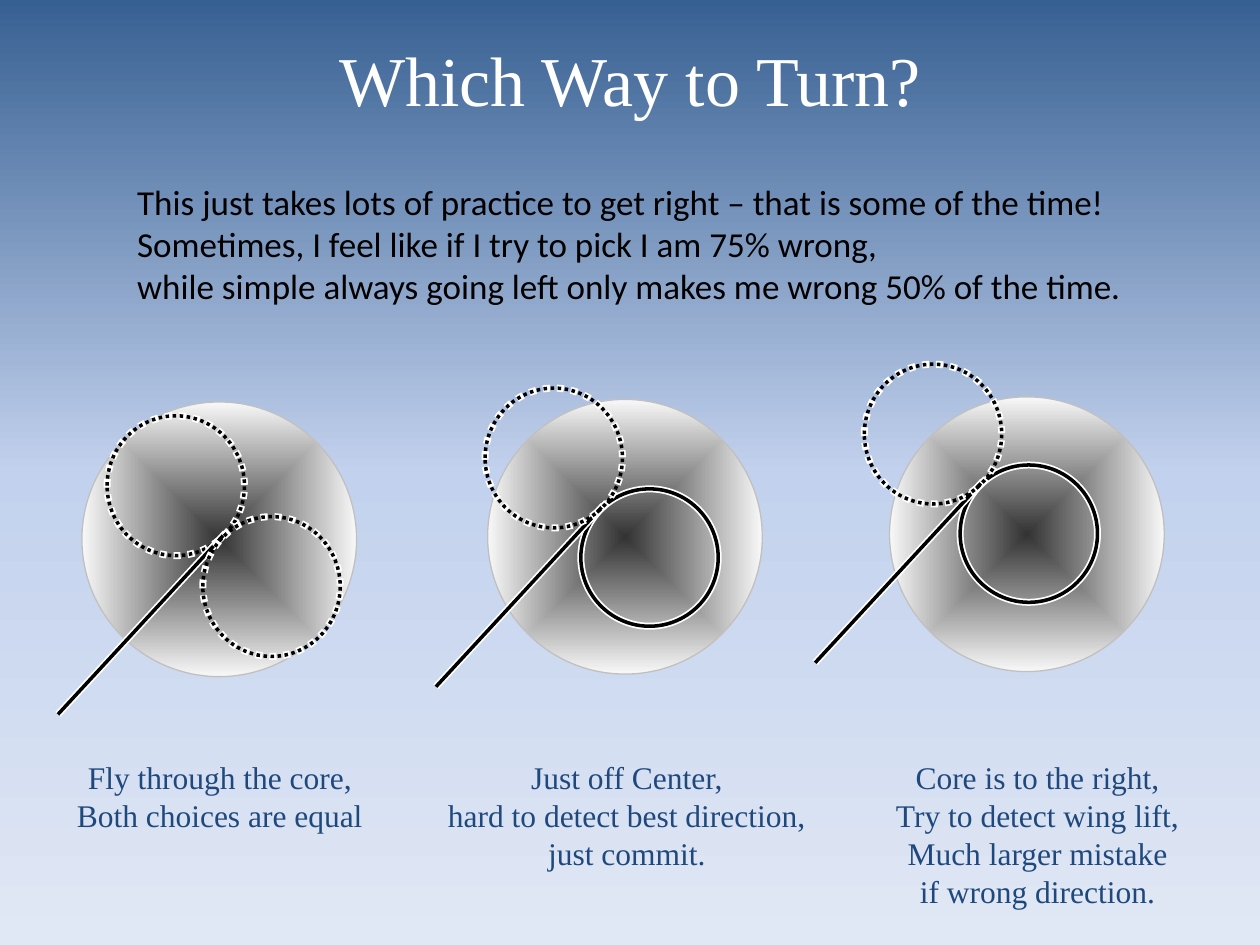
from lxml.etree import SubElement
from pptx import Presentation
from pptx.dml.color import RGBColor
from pptx.enum.dml import MSO_LINE
from pptx.enum.shapes import MSO_CONNECTOR, MSO_SHAPE
from pptx.enum.text import MSO_ANCHOR, MSO_AUTO_SIZE, PP_ALIGN
from pptx.oxml.ns import qn
from pptx.util import Emu, Pt

PX = 9144  # 100 px to the inch
SERIF = "Times New Roman"
CORE = 218
RING = 109
DOTS = MSO_LINE.ROUND_DOT

# Box of the first ring, core offset from it, second ring solid, caption box, caption
TURNS = [
    ((85, 330), (-20, -11), False, (50, 597, 249, 71),
     "Fly through the core,\nBoth choices are equal"),
    ((385, 308), (2, 9), True, (344, 597, 307, 101),
     "Just off Center,\nhard to detect best direction,\njust commit."),
    ((686, 289), (20, 26), True, (700, 597, 247, 131),
     "Core is to the right,\nTry to detect wing lift,\n"
     "Much larger mistake\nif wrong direction."),
]


def px(*nums):
    return [Emu(n * PX) for n in nums]


def rgb(code):
    return RGBColor.from_string(code)


def blend(owner, fill, stops, angle=None):
    """Fill with a gradient: linear at an angle, or outward from the centre."""
    fill.gradient()
    grad = owner.element.find(".//" + qn("a:gradFill"))
    for child in list(grad):
        grad.remove(child)
    row = SubElement(grad, qn("a:gsLst"))
    for pos, code in stops:
        stop = SubElement(row, qn("a:gs"), pos=str(pos * 1000))
        SubElement(stop, qn("a:srgbClr"), val=code)
    if angle is not None:
        SubElement(grad, qn("a:lin"), ang=str(angle * 60000), scaled="0")
    else:
        way = SubElement(grad, qn("a:path"), path="shape")
        SubElement(way, qn("a:fillToRect"), l="50000", t="50000", r="50000", b="50000")


def write(frame, text, size, font, color, align=PP_ALIGN.LEFT):
    frame.text = text
    for para in frame.paragraphs:
        para.alignment = align
        for run in para.runs:
            run.font.size = Pt(size)
            run.font.name = font
            run.font.color.rgb = rgb(color)


def label(shapes, box, text, **style):
    frame = shapes.add_textbox(*px(*box)).text_frame
    frame.word_wrap = False
    frame.auto_size = MSO_AUTO_SIZE.SHAPE_TO_FIT_TEXT
    write(frame, text, **style)


def stroke(line, color, width, dash=None):
    line.color.rgb = rgb(color)
    line.width = Pt(width)
    if dash:
        line.dash_style = dash


def disc(shapes, x, y, wide, high):
    shape = shapes.add_shape(MSO_SHAPE.OVAL, *px(x, y, wide, high))
    shape.shadow.inherit = False
    return shape


def core(shapes, x, y):
    shape = disc(shapes, x, y, CORE, CORE)
    blend(shape, shape.fill, [(0, "333333"), (100, "F8F8F8")])
    stroke(shape.line, "C0C0C0", 0.75)


def ring(shapes, x, y, pen, dash):
    shape = disc(shapes, x, y, RING, RING + 2 if dash else RING)
    shape.fill.background()
    stroke(shape.line, *pen, dash)


def track(shapes, x, y, pen):
    line = shapes.add_connector(MSO_CONNECTOR.STRAIGHT, *px(x, y, x - 133, y + 144))
    SubElement(line.element.spPr, qn("a:effectLst"))
    stroke(line.line, *pen)


def turn(slide, spot, shift, solid, box, text):
    """Draw one thermal with its flight track, two circling choices and caption."""
    shapes = slide.shapes.add_group_shape().shapes
    x, y = spot
    core(shapes, x + shift[0], y + shift[1])
    parts = [
        (ring, x, y, DOTS),
        (track, x + 94, y + 93),
        (ring, x + 76, y + 80, None if solid else DOTS),
    ]
    for draw, left, top, *dash in reversed(parts) if solid else parts:
        for pen in (("FFFFFF", 4), ("000000", 2)):
            draw(shapes, left, top, pen, *dash)
    label(shapes, box, text, size=18, font=SERIF, color="1F497D",
          align=PP_ALIGN.CENTER)


def head(slide, box):
    title = slide.shapes.title
    title.left, title.top, title.width, title.height = px(*box)
    title.text_frame.vertical_anchor = MSO_ANCHOR.MIDDLE
    write(title.text_frame, "Which Way to Turn?", size=40, font=SERIF,
          color="FFFFFF", align=PP_ALIGN.CENTER)


def main():
    deck = Presentation()
    deck.slide_width, deck.slide_height = px(1000, 750)
    slide = deck.slides.add_slide(deck.slide_layouts[5])
    blend(slide, slide.background.fill,
          [(0, "376092"), (50, "C2D1ED"), (100, "E1E8F5")], angle=90)
    head(slide, (50, 0, 900, 125))
    for row in TURNS:
        turn(slide, *row)
    label(slide.shapes, (99, 138, 808, 111),
          "This just takes lots of practice to get right – that is some of the time!\n"
          "Sometimes, I feel like if I try to pick I am 75% wrong,\v"
          "while simple always going left only makes me wrong 50% of the time.",
          size=20, font="Calibri", color="000000")
    deck.save("out.pptx")


if __name__ == "__main__":
    main()
